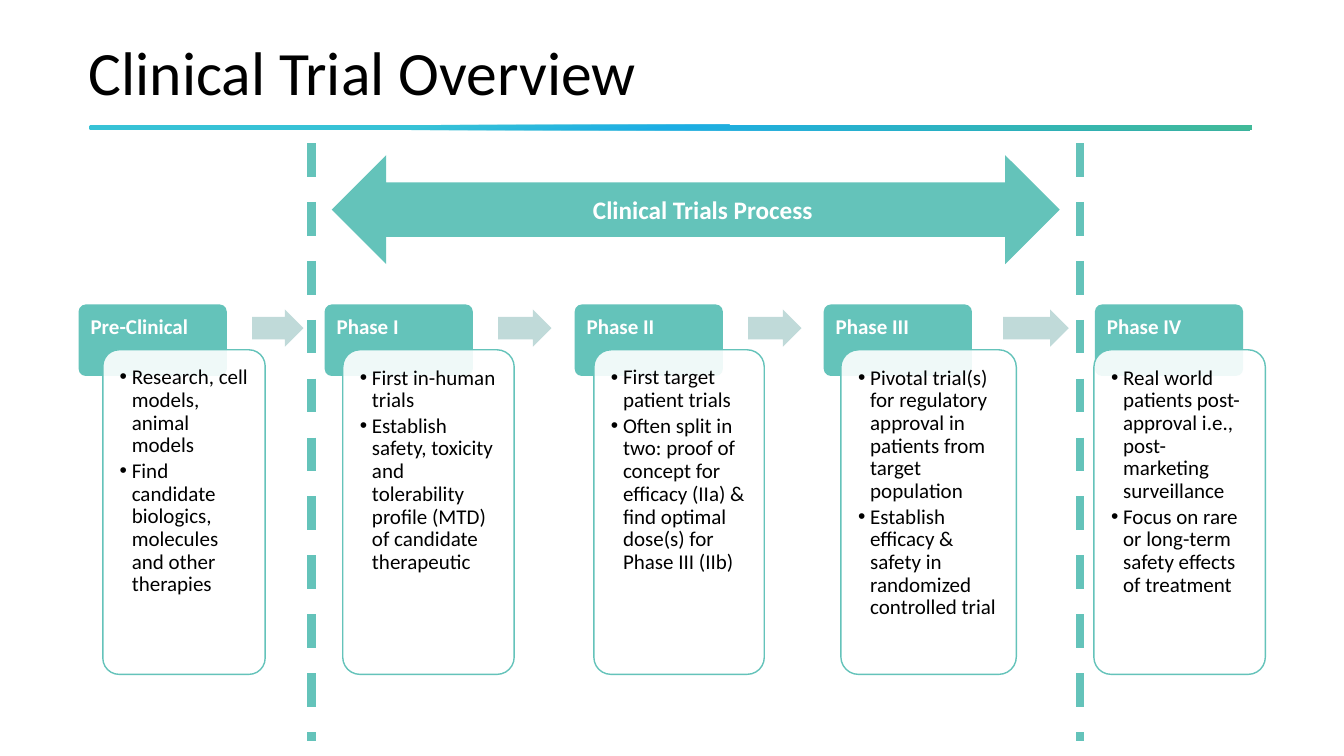
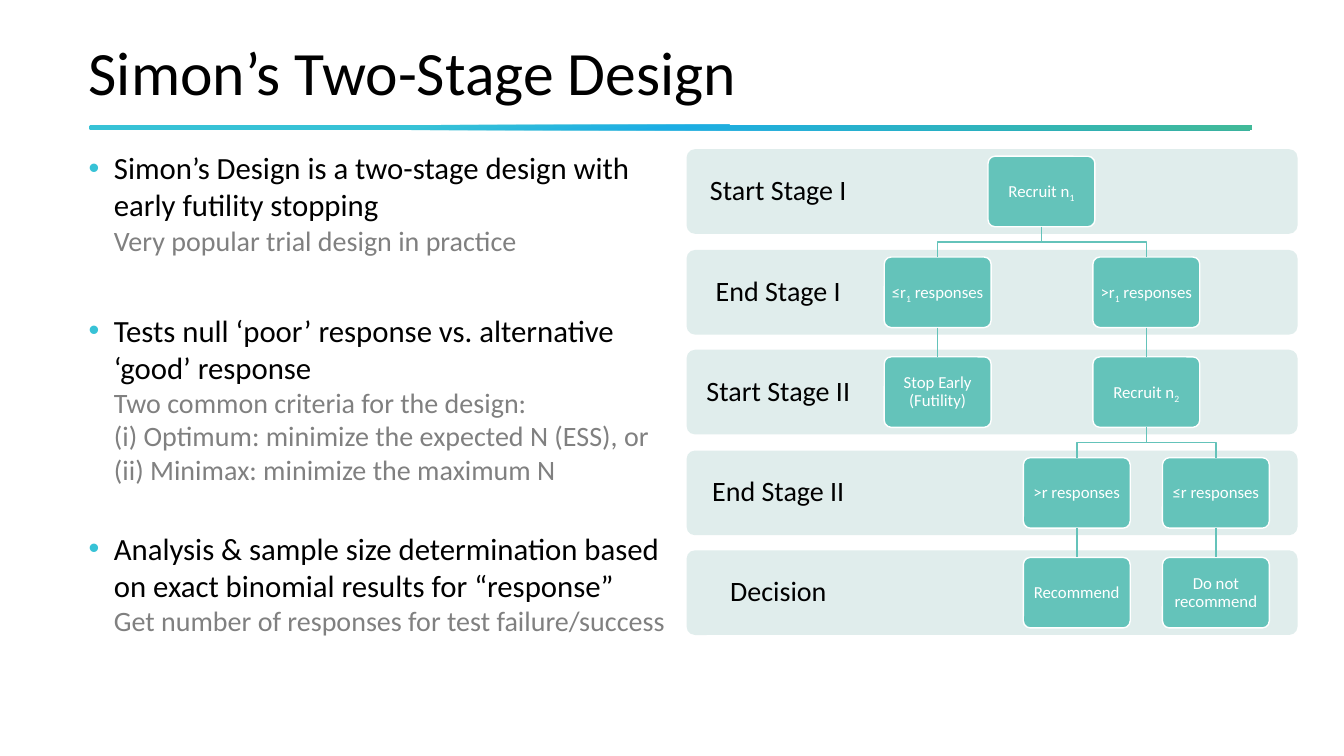
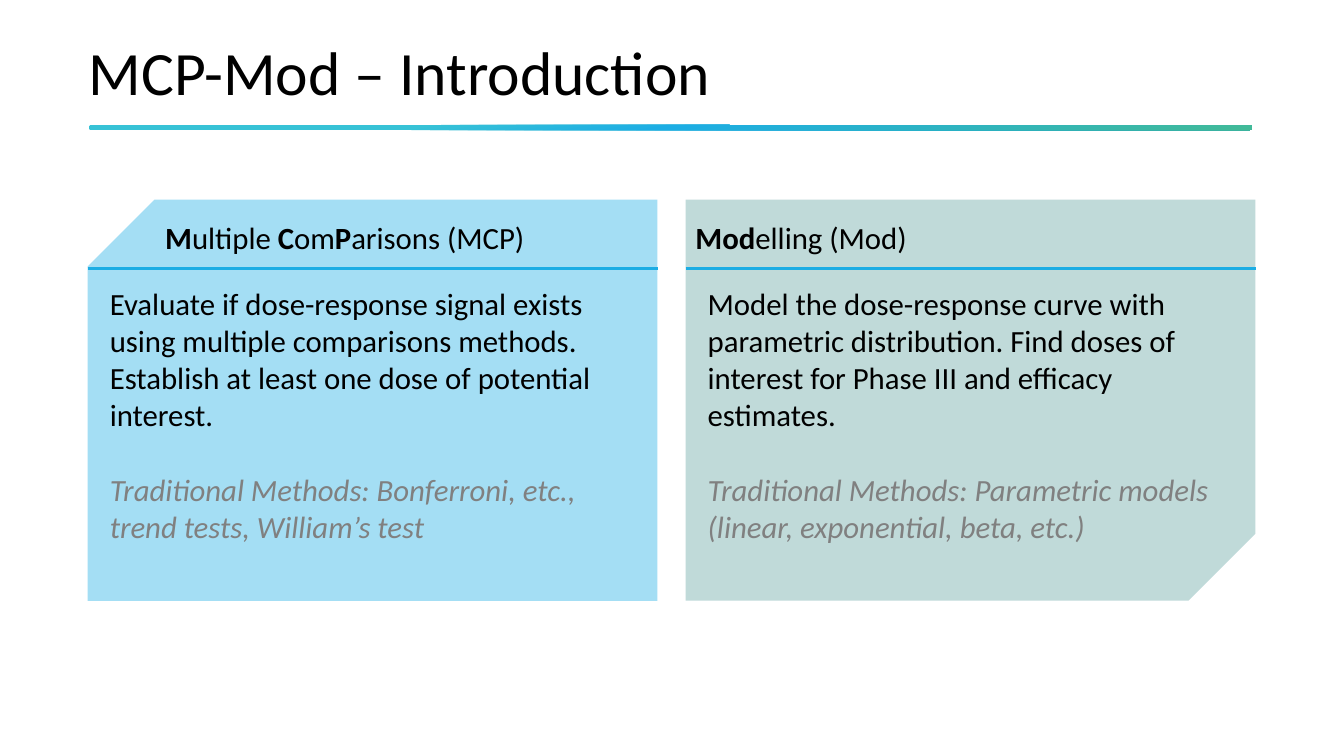
from copy import deepcopy

from lxml import etree
from pptx import Presentation
from pptx.dml.color import RGBColor
from pptx.enum.dml import MSO_LINE
from pptx.enum.shapes import MSO_CONNECTOR, MSO_SHAPE
from pptx.enum.text import MSO_ANCHOR, PP_ALIGN
from pptx.oxml.ns import qn
from pptx.util import Pt

PX = 9144
FONT = "Calibri"
BLACK, WHITE, GREY = "000000", "FFFFFF", "808080"
TEAL, MIST, PALE = "64C3BA", "C0DAD9", "E0EDEC"
CYAN, BLUE, SKY, GREEN = "37C2D6", "1CADE4", "A4DEF4", "42BA97"
ROUND = MSO_SHAPE.ROUNDED_RECTANGLE
SNIPPED = MSO_SHAPE.SNIP_1_RECTANGLE
RIGHT_ARROW, DOUBLE_ARROW = MSO_SHAPE.RIGHT_ARROW, MSO_SHAPE.LEFT_RIGHT_ARROW
STRAIGHT, DASH = MSO_CONNECTOR.STRAIGHT, MSO_LINE.DASH
TOP, MIDDLE, BOTTOM = MSO_ANCHOR.TOP, MSO_ANCHOR.MIDDLE, MSO_ANCHOR.BOTTOM
LEFT, CENTER = PP_ALIGN.LEFT, PP_ALIGN.CENTER

PHASES = [
    ("Pre-Clinical", 78, 102, 161, [
        "Research, cell models, animal models",
        "Find candidate biologics, molecules and other therapies"]),
    ("Phase I", 322, 340, 170, [
        "First in-human trials",
        "Establish safety, toxicity and tolerability profile (MTD) of candidate therapeutic"]),
    ("Phase II", 570, 589, 169, [
        "First target patient trials",
        "Often split in two: proof of concept for efficacy (IIa) & find optimal dose(s) for Phase III (IIb)"]),
    ("Phase III", 817, 834, 174, [
        "Pivotal trial(s) for regulatory approval in patients from target population",
        "Establish efficacy & safety in randomized controlled trial"]),
    ("Phase IV", 1086, 1085, 170, [
        "Real world patients post-approval i.e., post-marketing surveillance",
        "Focus on rare or long-term safety effects of treatment"]),
]
PHASE_ARROWS = [(250, 51), (494, 53), (742, 53), (995, 65)]

DESIGN_POINTS = [
    ("Simon’s Design is a two-stage design with early futility stopping\v"
     "Very popular trial design in practice", 0, True),
    ("Tests null ‘poor’ response vs. alternative ‘good’ response\v"
     "Two common criteria for the design:", 39, True),
    ("(i) Optimum: minimize the expected N (ESS), or "
     "(ii) Minimax: minimize the maximum N", 0, False),
    ("Analysis & sample size determination based on exact binomial results for “response”\v"
     "Get number of responses for test failure/success", 31, True),
]
STAGES = ["Start Stage I", "End Stage I", "Start Stage II", "End Stage II", "Decision"]
NODES = {
    "recruit first": ("Recruit n_1", 1033, 0),
    "few first": ("≤r_1_ responses", 930, 1),
    "many first": (">r_1_ responses", 1137, 1),
    "stop": ("Stop Early (Futility)", 930, 2),
    "recruit second": ("Recruit n_2", 1137, 2),
    "many total": (">r responses", 1068, 3),
    "few total": ("≤r responses", 1206, 3),
    "recommend": ("Recommend", 1068, 4),
    "reject": ("Do not recommend", 1206, 4),
}
LINKS = [
    ("recruit first", "few first"), ("recruit first", "many first"),
    ("few first", "stop"), ("many first", "recruit second"),
    ("recruit second", "many total"), ("recruit second", "few total"),
    ("many total", "recommend"), ("few total", "reject"),
]
PANELS = [
    (87, 154, "flipH", SKY, "*M*ultiple *C*om*P*arisons (MCP)",
     "Evaluate if dose-response signal exists using multiple comparisons methods. "
     "Establish at least one dose of potential interest.",
     "Traditional Methods: Bonferroni, etc., trend tests, William’s test"),
    (680, 680, "flipV", MIST, "*Mod*elling (Mod)",
     "Model the dose-response curve with parametric distribution. "
     "Find doses of interest for Phase III and efficacy estimates.",
     "Traditional Methods: Parametric models (linear, exponential, beta, etc.)"),
]


def rgb(value):
    return RGBColor.from_string(value)


def scaled(*lengths):
    return [length * PX for length in lengths]


def add_figure(page, kind, at, fill=None, line=None, width=1, adjust=()):
    figure = page.shapes.add_shape(kind, *scaled(*at))
    figure.shadow.inherit = False
    for index, value in enumerate(adjust):
        figure.adjustments[index] = value
    if fill:
        figure.fill.solid()
        figure.fill.fore_color.rgb = rgb(fill)
    set_line(figure, line, width)
    return figure


def set_line(figure, color, width):
    if color:
        figure.line.color.rgb = rgb(color)
        figure.line.width = Pt(width)
    else:
        figure.line.fill.background()


def add_line(page, start, end, color, width):
    line = page.shapes.add_connector(STRAIGHT, *scaled(*start, *end))
    set_line(line, color, width)
    etree.SubElement(line._element.spPr, qn("a:effectLst"))
    return line


def set_frame(box, insets=(10, 5, 10, 5), anchor=TOP):
    frame = box.text_frame
    frame.word_wrap = True
    frame.vertical_anchor = anchor
    frame.margin_left, frame.margin_top, frame.margin_right, frame.margin_bottom = scaled(*insets)
    return frame


def style_span(span, size, color, bold=False, italic=False):
    span.font.name = FONT
    span.font.size = Pt(size)
    span.font.color.rgb = rgb(color)
    span.font.bold = bold
    span.font.italic = italic


def write(para, text, size, color, bold=False, italic=False, align=LEFT, spacing=1.0):
    para.text = text
    para.alignment = align
    para.line_spacing = spacing
    for span in para.runs:
        style_span(span, size, color, bold, italic)


def write_marked(para, text, mark, size, color, align=LEFT, spacing=1.0):
    para.alignment = align
    para.line_spacing = spacing
    for index, part in enumerate(text.split(mark)):
        if not part:
            continue
        span = para.add_run()
        span.text = part
        marked = index % 2 == 1
        style_span(span, size, color, bold=marked and mark == "*")
        if marked and mark == "_":
            span.font._element.set("baseline", "-25000")


def add_text_box(page, at, insets=(10, 5, 10, 5), anchor=TOP):
    return set_frame(page.shapes.add_textbox(*scaled(*at)), insets, anchor)


def set_bullet(para, indent, color=None):
    props = para._p.get_or_add_pPr()
    props.set("marL", str(indent * PX))
    props.set("indent", str(-indent * PX))
    if color:
        bullet_color = etree.SubElement(props, qn("a:buClr"))
        etree.SubElement(bullet_color, qn("a:srgbClr")).set("val", color)
    etree.SubElement(props, qn("a:buFont")).set("typeface", "Arial")
    etree.SubElement(props, qn("a:buChar")).set("char", "•")


def next_para(frame, index):
    return frame.add_paragraph() if index else frame.paragraphs[0]


def set_gradient(figure, stops):
    figure.fill.gradient()
    figure.fill.gradient_angle = 280
    stop_list = figure._element.spPr.find(".//" + qn("a:gsLst"))
    stop_list.append(deepcopy(stop_list[0]))
    for stop, (position, color) in zip(figure.fill.gradient_stops, stops):
        stop.position = position
        stop.color.rgb = rgb(color)


def add_page(deck, title):
    page = deck.slides.add_slide(deck.slide_layouts[6])
    rule = add_figure(page, ROUND, (88, 124, 1154, 5), adjust=[0.5])
    set_gradient(rule, [(0.28, CYAN), (0.5, BLUE), (1, GREEN)])
    frame = add_text_box(page, (88, 24, 1154, 84), (0, 0, 0, 0), BOTTOM)
    write(frame.paragraphs[0], title, 44, BLACK, spacing=0.9)
    return page


def add_phase(page, name, tab_left, card_left, card_width, bullets):
    tab = add_figure(page, ROUND, (tab_left, 302, 147, 71), TEAL, adjust=[0.1])
    frame = set_frame(tab, (10, 10, 10, 6))
    write(frame.paragraphs[0], name, 15, WHITE, bold=True, spacing=0.9)
    card = add_figure(page, ROUND, (card_left, 347, card_width, 322), WHITE, TEAL, adjust=[0.1])
    card_color = card._element.spPr.find(qn("a:solidFill"))[0]
    etree.SubElement(card_color, qn("a:alpha")).set("val", "90000")
    frame = set_frame(card, (12, 12, 12, 12))
    for index, bullet in enumerate(bullets):
        para = next_para(frame, index)
        set_bullet(para, 12)
        write(para, bullet, 15, BLACK, spacing=0.9)
        para.space_after = Pt(2)


def add_stage(page, row, name):
    band = add_figure(page, ROUND, (681, row_top(row), 606, 84), PALE, adjust=[0.1])
    frame = set_frame(band, (14, 14, 438, 14), MIDDLE)
    write(frame.paragraphs[0], name, 20, BLACK, align=CENTER, spacing=0.9)


def row_top(row):
    return 148 + (row * 199 + 1) // 2


def add_node(page, label, center, row):
    node = add_figure(page, ROUND, (center - 53, row_top(row) + 7, 106, 70), TEAL, WHITE, adjust=[0.1])
    frame = set_frame(node, (5, 5, 5, 5), MIDDLE)
    write_marked(frame.paragraphs[0], label, "_", 12, WHITE, CENTER, 0.9)
    return node


def add_link(page, nodes, parent, child):
    (_, start_x, start_row), (_, end_x, end_row) = NODES[parent], NODES[child]
    start_y, end_y = row_top(start_row) + 77, row_top(end_row) + 7
    if start_x == end_x:
        line = add_line(page, (start_x, start_y), (end_x, end_y), TEAL, 1)
        line.begin_connect(nodes[parent], 2)
        line.end_connect(nodes[child], 0)
        return
    bend = (start_y + end_y) // 2
    outline = page.shapes.build_freeform(start_x, start_y, PX)
    outline.add_line_segments([(start_x, bend), (end_x, bend), (end_x, end_y)], close=False)
    elbow = outline.convert_to_shape()
    elbow.shadow.inherit = False
    elbow.fill.background()
    set_line(elbow, TEAL, 1)


def add_panel(page, left, heading_left, flip, fill, heading, body, methods):
    panel = add_figure(page, SNIPPED, (left, 198, 565, 398), fill)
    panel._element.spPr.find(qn("a:xfrm")).set(flip, "1")
    add_line(page, (left, 266), (left + 566, 266), BLUE, 2)
    frame = add_text_box(page, (heading_left, 212, 456, 47))
    write_marked(frame.paragraphs[0], heading, "*", 22, BLACK)
    frame = add_text_box(page, (left + 12, 278, 541, 269))
    write(frame.paragraphs[0], body, 22, BLACK)
    para = frame.add_paragraph()
    write(para, methods, 22, GREY, italic=True)
    para.space_before = Pt(27)


def build_overview(deck):
    page = add_page(deck, "Clinical Trial Overview")
    for phase in PHASES:
        add_phase(page, *phase)
    for left, width in PHASE_ARROWS:
        add_figure(page, RIGHT_ARROW, (left, 307, width, 37), MIST, adjust=[0.6, 0.5])
    process = add_figure(page, DOUBLE_ARROW, (329, 154, 722, 108), TEAL)
    frame = set_frame(process, (24, 5, 10, 5), MIDDLE)
    write(frame.paragraphs[0], "Clinical Trials Process", 18, WHITE, bold=True, align=CENTER)
    for x in (309, 1071):
        add_line(page, (x, 142), (x, 735), TEAL, 6).line.dash_style = DASH


def build_two_stage(deck):
    page = add_page(deck, "Simon’s Two-Stage Design")
    frame = add_text_box(page, (88, 148, 579, 542), (0, 0, 0, 0))
    for index, (text, gap, bulleted) in enumerate(DESIGN_POINTS):
        para = next_para(frame, index)
        if bulleted:
            set_bullet(para, 25, CYAN)
        else:
            para._p.get_or_add_pPr().set("marL", str(25 * PX))
        write(para, text, 20, GREY)
        para.space_before = Pt(gap)
        if bulleted:
            style_span(para.runs[0], 22, BLACK)
    for row, name in enumerate(STAGES):
        add_stage(page, row, name)
    nodes = {key: add_node(page, *node) for key, node in NODES.items()}
    for parent, child in LINKS:
        add_link(page, nodes, parent, child)


def build_introduction(deck):
    page = add_page(deck, "MCP-Mod – Introduction")
    for panel in PANELS:
        add_panel(page, *panel)


def main():
    deck = Presentation()
    deck.slide_width, deck.slide_height = scaled(1333, 750)
    build_overview(deck)
    build_two_stage(deck)
    build_introduction(deck)
    deck.save("out.pptx")


if __name__ == "__main__":
    main()
